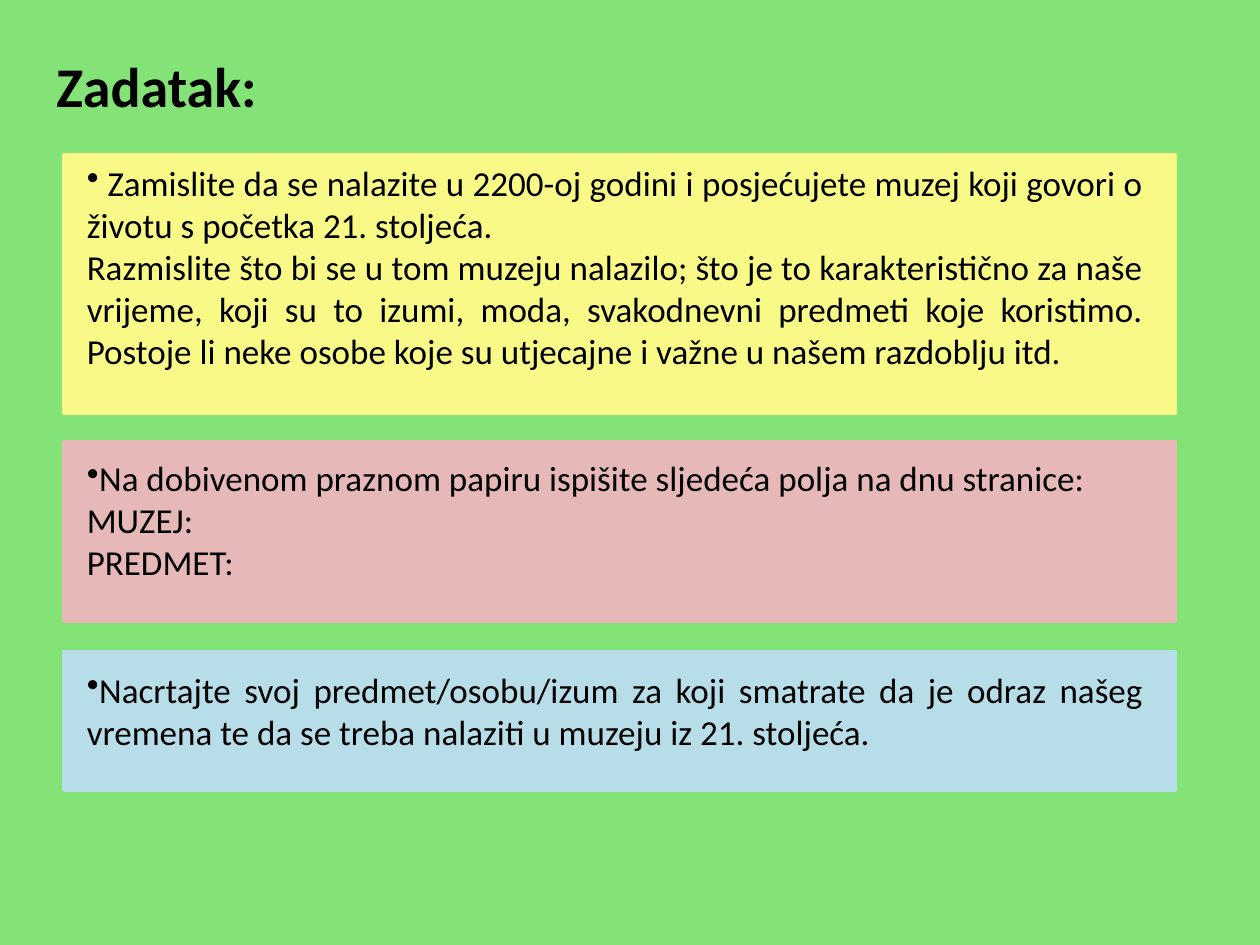
from typing import NamedTuple

from lxml import etree
from pptx import Presentation
from pptx.dml.color import RGBColor
from pptx.enum import shapes, text
from pptx.oxml import ns
from pptx.util import Inches, Pt

GREEN = RGBColor(0x84, 0xE3, 0x77)
BLUE = RGBColor(0xB7, 0xDE, 0xE8)
PINK = RGBColor(0xE6, 0xB9, 0xB8)
YELLOW = RGBColor(0xF9, 0xF9, 0x87)
BLACK = RGBColor(0, 0, 0)
FONT = "Calibri"
TASK_GAP = 48.8  # points: two lines of 20 pt text


class Panel(NamedTuple):
    left: float
    top: float
    width: float
    height: float
    color: RGBColor


class Para(NamedTuple):
    text: str
    bullet: bool = False
    before: float = 0


PANELS = [
    Panel(0, 0, 10, 7.5, GREEN),
    Panel(0.51, 5.17, 8.82, 1.1, BLUE),
    Panel(0.51, 3.51, 8.82, 1.42, PINK),
    Panel(0.51, 1.23, 8.82, 2.05, YELLOW),
]

TASKS = [
    Para(" Zamislite da se nalazite u 2200-oj godini i posjećujete muzej koji "
         "govori o životu s početka 21. stoljeća.", bullet=True),
    Para("Razmislite što bi se u tom muzeju nalazilo; što je to karakteristično "
         "za naše vrijeme, koji su to izumi, moda, svakodnevni predmeti koje "
         "koristimo. Postoje li neke osobe koje su utjecajne i važne u našem "
         "razdoblju itd."),
    Para("Na dobivenom praznom papiru ispišite sljedeća polja na dnu stranice:",
         bullet=True, before=TASK_GAP),
    Para("MUZEJ:"),
    Para("PREDMET:"),
    Para("Nacrtajte svoj predmet/osobu/izum za koji smatrate da je odraz našeg "
         "vremena te da se treba nalaziti u muzeju iz 21. stoljeća.",
         bullet=True, before=TASK_GAP),
]


def add_panel(s, panel: Panel) -> None:
    sp = s.shapes.add_shape(
        shapes.MSO_SHAPE.RECTANGLE, Inches(panel.left), Inches(panel.top),
        Inches(panel.width), Inches(panel.height))
    sp.shadow.inherit = False
    sp.fill.solid()
    sp.fill.fore_color.rgb = panel.color
    sp.line.color.rgb = panel.color
    sp.line.width = Pt(2)


def add_bullet(p) -> None:
    bullet = etree.SubElement(p._p.get_or_add_pPr(), ns.qn("a:buChar"))
    bullet.set("char", "•")


def add_text(s, paras: list[Para], left: float, top: float, width: float,
             height: float, *, size: float, bold: bool = False,
             align=text.PP_ALIGN.LEFT) -> None:
    tf = s.shapes.add_textbox(
        Inches(left), Inches(top), Inches(width), Inches(height)).text_frame
    tf.word_wrap = True
    tf.auto_size = text.MSO_AUTO_SIZE.SHAPE_TO_FIT_TEXT
    for i, para in enumerate(paras):
        p = tf.paragraphs[0] if i == 0 else tf.add_paragraph()
        p.alignment = align
        if para.bullet:
            add_bullet(p)
        if para.before:
            p.space_before = Pt(para.before)
        r = p.add_run()
        r.text = para.text
        r.font.name = FONT
        r.font.size = Pt(size)
        r.font.bold = bold
        r.font.color.rgb = BLACK


def main() -> None:
    prs = Presentation()
    prs.slide_width, prs.slide_height = Inches(10), Inches(7.5)
    s = prs.slides.add_slide(prs.slide_layouts[6])

    # Green ground and one coloured panel per task
    for panel in PANELS:
        add_panel(s, panel)

    # Heading and tasks
    add_text(s, [Para("Zadatak:")], 0.35, 0.36, 2.2, 0.64, size=32, bold=True)
    add_text(s, TASKS, 0.59, 1.23, 8.58, 5.12, size=20,
             align=text.PP_ALIGN.JUSTIFY)

    prs.save("out.pptx")


if __name__ == "__main__":
    main()
